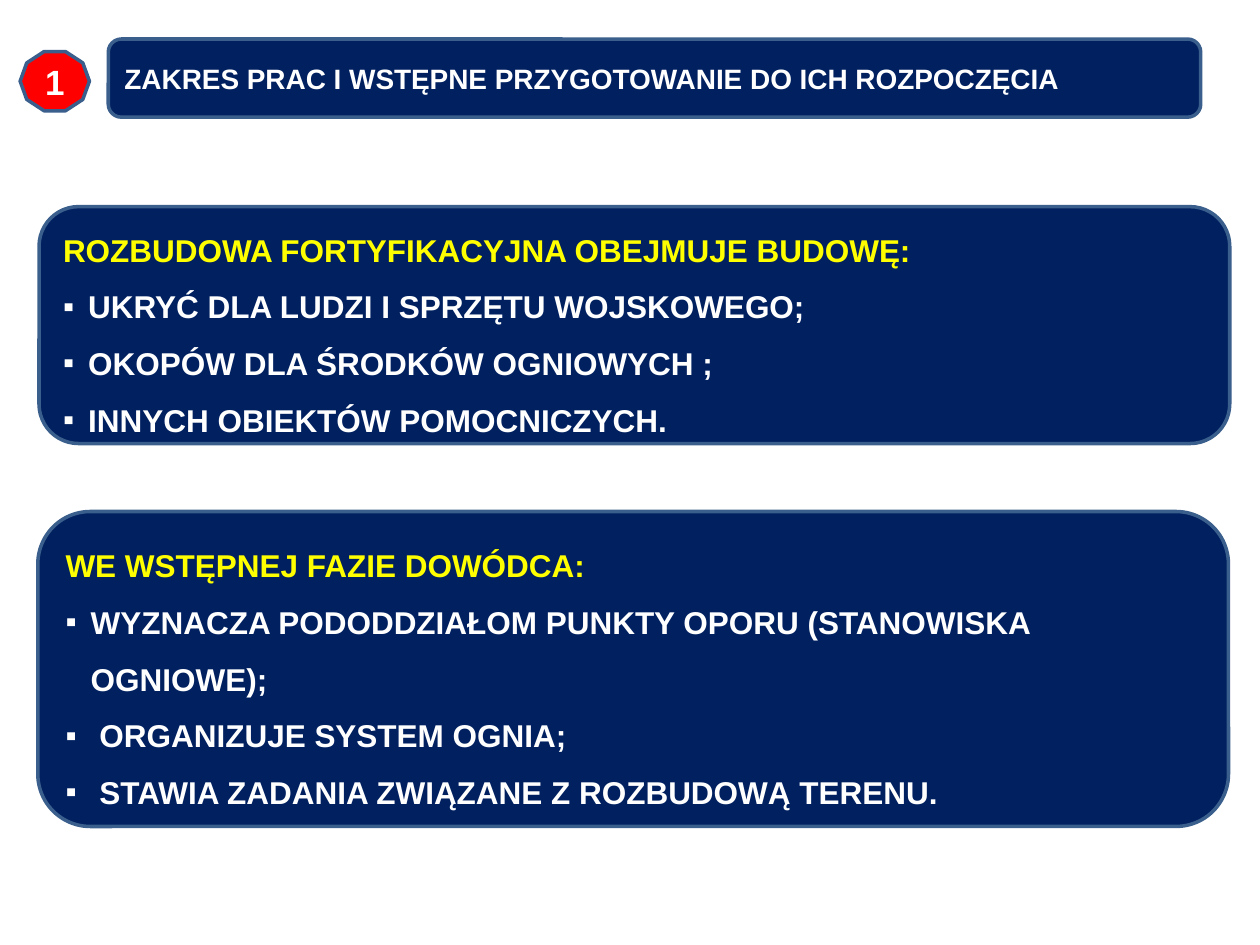
import pptx
import pptx.dml.color
import pptx.enum.shapes
import pptx.enum.text
import pptx.oxml
import pptx.util
from pptx.util import Inches

COLORS = {"navy": "002060", "border": "3A5F8C", "red": "FF0000",
          "yellow": "FFFF00", "white": "FFFFFF"}
SHAPES = pptx.enum.shapes.MSO_SHAPE
ALIGN = pptx.enum.text.PP_ALIGN


def rgb(name):
    return pptx.dml.color.RGBColor.from_string(COLORS[name])


def write_paragraph(paragraph, text, size=18, color="white", align=ALIGN.LEFT,
                    line_spacing=None, bullet=None):
    paragraph.alignment = align
    if line_spacing:
        paragraph.line_spacing = line_spacing
    if bullet:
        properties = paragraph._p.get_or_add_pPr()
        properties.set("marL", str(Inches(0.2)))
        properties.set("indent", str(-Inches(0.2)))
        for tag, name, value in (("buFont", "typeface", "Arial"), ("buChar", "char", bullet)):
            element = pptx.oxml.xmlchemy.OxmlElement(f"a:{tag}")
            element.set(name, value)
            properties.append(element)
    run = paragraph.add_run()
    run.text = text
    run.font.name = "Arial"
    run.font.size = pptx.util.Pt(size)
    run.font.bold = True
    run.font.color.rgb = rgb(color)


presentation = pptx.Presentation()
presentation.slide_width = Inches(10)
presentation.slide_height = Inches(7.5)
slide = presentation.slides.add_slide(presentation.slide_layouts[6])

body = {"line_spacing": 1.5}
heading = {**body, "color": "yellow"}
item = {**body, "bullet": "▪"}

# Each block: preset, (left, top, width, height), fill, paragraphs with their format
blocks = [
    (SHAPES.ROUNDED_RECTANGLE, (0.31, 1.64, 9.45, 1.88), "navy", [
        ("ROZBUDOWA FORTYFIKACYJNA OBEJMUJE BUDOWĘ:", heading),
        ("UKRYĆ DLA LUDZI I SPRZĘTU WOJSKOWEGO;", item),
        ("OKOPÓW DLA ŚRODKÓW OGNIOWYCH ;", item),
        ("INNYCH OBIEKTÓW POMOCNICZYCH.", item),
    ]),
    (SHAPES.ROUNDED_RECTANGLE, (0.86, 0.31, 8.67, 0.62), "navy", [
        ("ZAKRES PRAC I WSTĘPNE PRZYGOTOWANIE DO ICH ROZPOCZĘCIA", {"size": 16}),
    ]),
    (SHAPES.DECAGON, (0.16, 0.41, 0.55, 0.47), "red", [
        ("1", {"size": 20, "align": ALIGN.CENTER}),
    ]),
    (SHAPES.ROUNDED_RECTANGLE, (0.3, 4.06, 9.45, 2.5), "navy", [
        ("WE WSTĘPNEJ FAZIE DOWÓDCA:", heading),
        ("WYZNACZA PODODDZIAŁOM PUNKTY OPORU (STANOWISKA OGNIOWE);", item),
        (" ORGANIZUJE SYSTEM OGNIA;", item),
        (" STAWIA ZADANIA ZWIĄZANE Z ROZBUDOWĄ TERENU.", item),
    ]),
]

for preset, box, fill, paragraphs in blocks:
    shape = slide.shapes.add_shape(preset, *map(Inches, box))
    shape.shadow.inherit = False
    shape.fill.solid()
    shape.fill.fore_color.rgb = rgb(fill)
    shape.line.color.rgb = rgb("border")
    shape.line.width = pptx.util.Pt(2)
    frame = shape.text_frame
    frame.word_wrap = True
    frame.vertical_anchor = pptx.enum.text.MSO_ANCHOR.MIDDLE
    for index, (text, style) in enumerate(paragraphs):
        paragraph = frame.add_paragraph() if index else frame.paragraphs[0]
        write_paragraph(paragraph, text, **style)

presentation.save("out.pptx")
